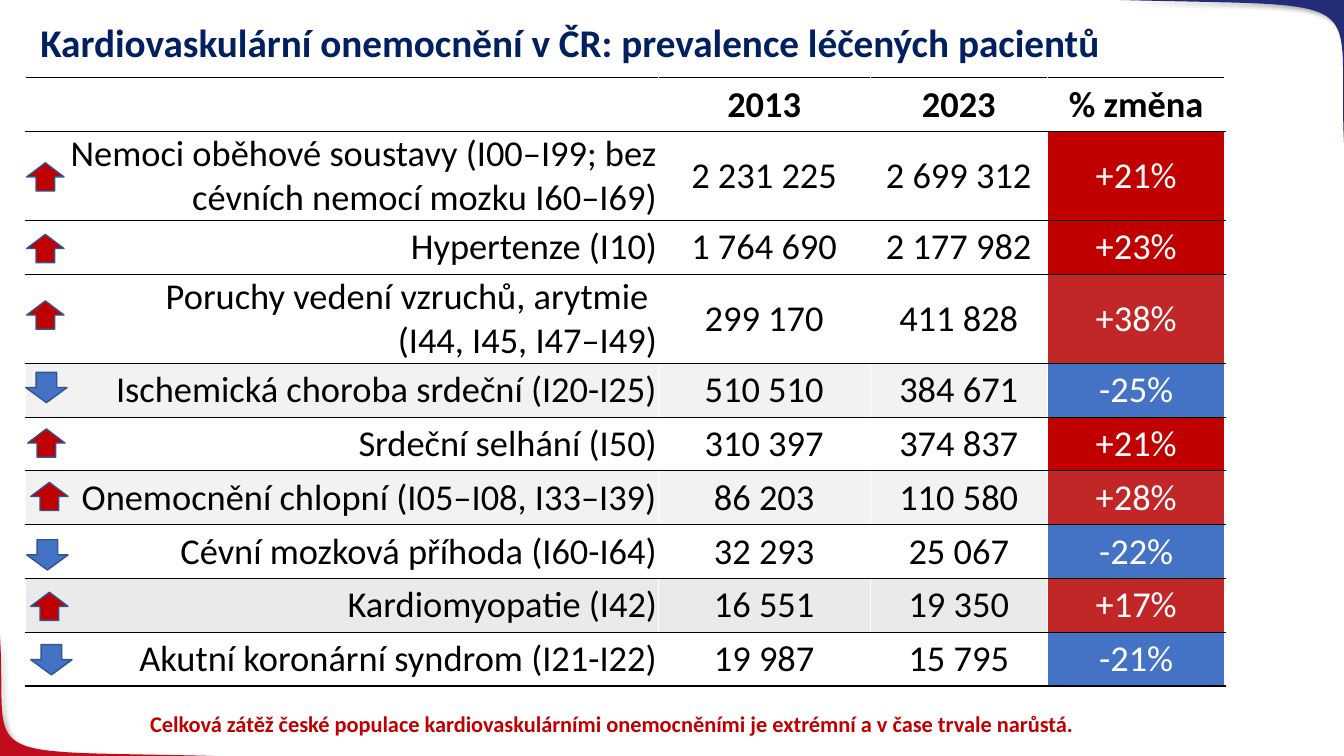
from lxml import etree
from pptx import Presentation
from pptx.dml.color import RGBColor
from pptx.enum.shapes import MSO_SHAPE as SHAPE
from pptx.enum.text import MSO_ANCHOR as ANCHOR, MSO_AUTO_SIZE as AUTO, PP_ALIGN as ALIGN
from pptx.oxml import parse_xml
from pptx.oxml.ns import nsdecls, qn
from pptx.util import Inches, Pt

COLORS = {
    "navy": "232C77", "crimson": "C10C1D", "title": "002060", "black": "000000",
    "white": "FFFFFF", "red": "C00000", "brick": "C22728", "blue": "4472C4",
    "outline": "325491", "light": "F2F2F2", "grey": "EAEAEA",
}


def rgb(name):
    return RGBColor.from_string(COLORS[name])


def add_text(paragraph, text, size, color, bold, align):
    paragraph.alignment = align
    for number, line in enumerate(text.split("\n")):
        if number:
            paragraph.add_line_break()
        run = paragraph.add_run()
        run.text = line
        run.font.name = "Calibri"
        run.font.size = Pt(size)
        run.font.bold = bold
        run.font.color.rgb = rgb(color)


prs = Presentation()
prs.slide_width, prs.slide_height = Inches(13.33), Inches(7.5)
slide = prs.slides.add_slide(prs.slide_layouts[5])
shapes = slide.shapes

# Corner decorations: a Bézier edge closed at the slide corner
corners = [
    ("crimson", [(2.13, 7.5), (-0.34, 7.44), (0.08, 7.59), (0, 6.3)], (0, 7.5)),
    ("navy", [(11.11, 0), (13.7, 0.07), (13.26, -0.1), (13.33, 1.42)], (13.33, 0)),
]
STEPS = 40
for color, controls, corner in corners:
    edge = []
    for step in range(STEPS + 1):
        t = step / STEPS
        weights = [(1 - t) ** 3, 3 * t * (1 - t) ** 2, 3 * t ** 2 * (1 - t), t ** 3]
        edge.append([Inches(sum(w * point[axis] for w, point in zip(weights, controls)))
                     for axis in (0, 1)])
    builder = shapes.build_freeform(*edge[0])
    builder.add_line_segments(edge[1:] + [[Inches(value) for value in corner]], close=True)
    swoosh = builder.convert_to_shape()
    swoosh.fill.solid()
    swoosh.fill.fore_color.rgb = rgb(color)
    swoosh.line.fill.background()
    swoosh._element.spPr.append(parse_xml(
        f'<a:effectLst {nsdecls("a")}><a:outerShdw blurRad="{Pt(4)}" dist="{Pt(3)}" '
        f'dir="2700000" rotWithShape="0"><a:srgbClr val="{COLORS["black"]}">'
        '<a:alpha val="40000"/></a:srgbClr></a:outerShdw></a:effectLst>'))

title = shapes.title
title.left, title.top, title.width, title.height = map(Inches, (0.3, 0.18, 12.68, 0.57))
title.text_frame.auto_size = AUTO.NONE
title.text_frame.vertical_anchor = ANCHOR.TOP
heading = title.text_frame.paragraphs[0]
heading.line_spacing = 0.9
add_text(heading, "Kardiovaskulární onemocnění v ČR: prevalence léčených pacientů",
         28, "title", True, ALIGN.LEFT)

# Texts, row fill, change fill, left and top of the arrow
header = ["", "2013", "2023", "% změna"]
diagnoses = [
    ("Nemoci oběhové soustavy (I00–I99; bez cévních nemocí mozku I60–I69)",
     "2 231 225", "2 699 312", "+21%", None, "red", 0.31, 1.57),
    ("Hypertenze (I10)", "1 764 690", "2 177 982", "+23%", None, "red", 0.31, 2.28),
    ("Poruchy vedení vzruchů, arytmie \n(I44, I45, I47–I49)",
     "299 170", "411 828", "+38%", None, "brick", 0.31, 2.94),
    ("Ischemická choroba srdeční (I20-I25)",
     "510 510", "384 671", "-25%", "light", "blue", 0.31, 3.64),
    ("Srdeční selhání (I50)", "310 397", "374 837", "+21%", "white", "red", 0.32, 4.21),
    ("Onemocnění chlopní (I05–I08, I33–I39)",
     "86 203", "110 580", "+28%", "light", "brick", 0.35, 4.74),
    ("Cévní mozková příhoda (I60-I64)",
     "32 293", "25 067", "-22%", None, "blue", 0.32, 5.3),
    ("Kardiomyopatie (I42)", "16 551", "19 350", "+17%", "grey", "brick", 0.35, 5.83),
    ("Akutní koronární syndrom (I21-I22)",
     "19 987", "15 795", "-21%", None, "blue", 0.36, 6.34),
]
table_rows = [(header, [None] * 4)]
table_rows += [(d[:4], [d[4]] * 3 + [d[5]]) for d in diagnoses]

TABLE_HEIGHT = 6.03
prevalence = shapes.add_table(len(table_rows), 4, Inches(0.25), Inches(0.77),
                              Inches(11.9), Inches(TABLE_HEIGHT)).table
prevalence.first_row = prevalence.horz_banding = False
for column, width in zip(prevalence.columns, (6.28, 2.1, 1.76, 1.76)):
    column.width = Inches(width)

BORDERS = {"lnL": "white", "lnR": "white", "lnT": "black", "lnB": "black"}
TWO_LINE_ROWS = (1, 3)
TALL = 0.88
LOW = (TABLE_HEIGHT - TALL * len(TWO_LINE_ROWS)) / (len(table_rows) - len(TWO_LINE_ROWS))
for r, (texts, fills) in enumerate(table_rows):
    prevalence.rows[r].height = Inches(TALL if r in TWO_LINE_ROWS else LOW)
    for c, (text, fill) in enumerate(zip(texts, fills)):
        cell = prevalence.cell(r, c)
        cell.vertical_anchor = ANCHOR.MIDDLE
        cell.margin_left = cell.margin_right = Inches(0.01)
        cell.margin_top = cell.margin_bottom = 0
        properties = cell._tc.get_or_add_tcPr()
        for side, color in BORDERS.items():
            border = etree.SubElement(properties, qn(f"a:{side}"), w=str(Pt(1)))
            paint = etree.SubElement(border, qn("a:solidFill"))
            etree.SubElement(paint, qn("a:srgbClr"), val=COLORS[color])
        if fill:
            cell.fill.solid()
            cell.fill.fore_color.rgb = rgb(fill)
        else:
            cell.fill.background()
        if text:
            add_text(cell.text_frame.paragraphs[0], text, 26,
                     "white" if r and c == 3 else "black", r == 0,
                     ALIGN.CENTER if c else ALIGN.RIGHT)

conclusion = shapes.add_textbox(Inches(0.12), Inches(7), Inches(11.9), Inches(0.37)).text_frame
conclusion.word_wrap = True
add_text(conclusion.paragraphs[0],
         "Celková zátěž české populace kardiovaskulárními onemocněními je extrémní "
         "a v čase trvale narůstá.", 16, "red", True, ALIGN.CENTER)

# Trend arrows
for *_, change, _, _, left, top in diagnoses:
    rising = change.startswith("+")
    width, height = (0.28, 0.37) if rising else (0.3, 0.41)
    trend = shapes.add_shape(SHAPE.RIGHT_ARROW, Inches(left), Inches(top),
                             Inches(width), Inches(height))
    trend.rotation = 270 if rising else 90
    trend.shadow.inherit = False
    trend.fill.solid()
    trend.fill.fore_color.rgb = rgb("red" if rising else "blue")
    trend.line.color.rgb = rgb("outline")
    trend.line.width = Pt(1)

prs.save("out.pptx")
